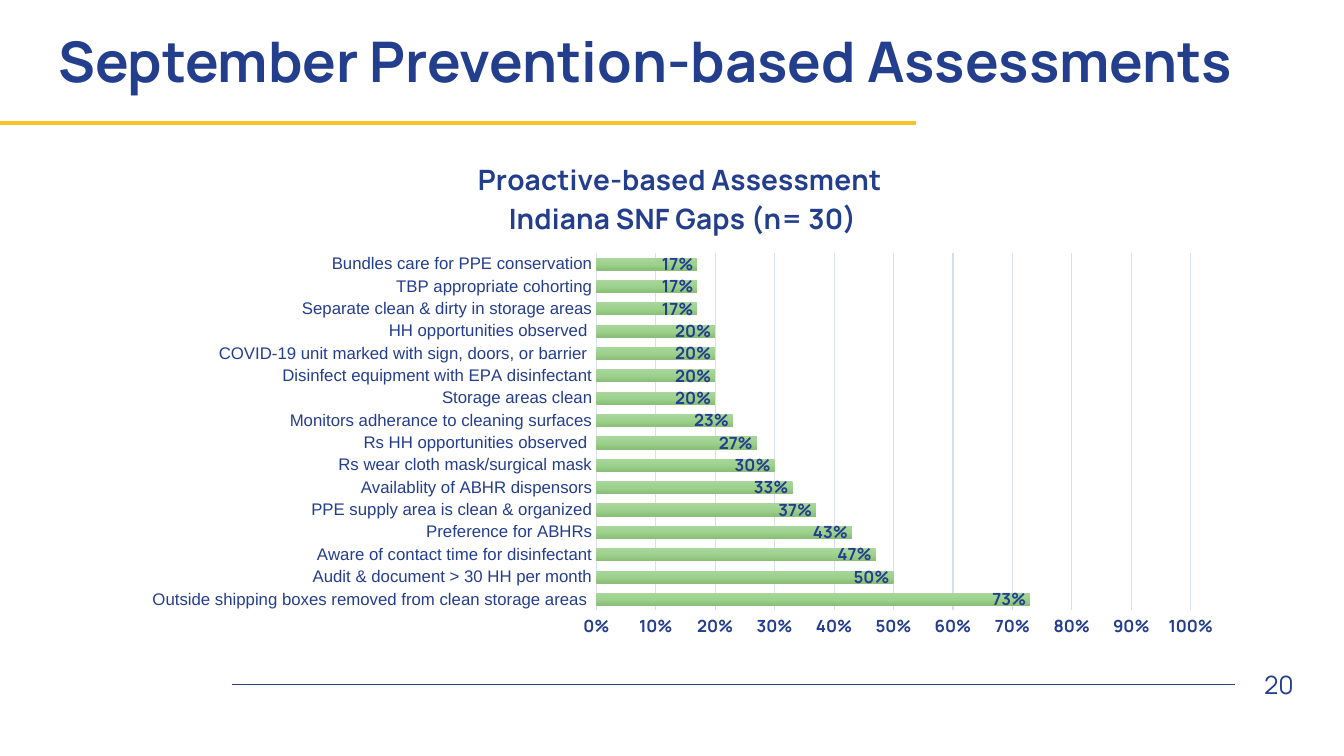
from copy import deepcopy
from dataclasses import dataclass

from lxml import etree
from pptx import Presentation
from pptx.chart.data import CategoryChartData
from pptx.dml.color import RGBColor
from pptx.enum.chart import XL_CHART_TYPE as ChartType, XL_LABEL_POSITION as LabelPosition
from pptx.enum.chart import XL_TICK_MARK as TickMark
from pptx.enum.shapes import MSO_CONNECTOR as Connector
from pptx.enum.text import MSO_ANCHOR as Anchor, PP_ALIGN as Align
from pptx.oxml import parse_xml
from pptx.oxml.ns import nsdecls, qn
from pptx.util import Inches, Pt


@dataclass(frozen=True)
class Theme:
    ink: str = "243E8E"
    accent: str = "F7C327"
    grid: str = "D7DFF5"
    bars: tuple = (
        ((0, "74B35C"), (0.5, "5EAD38"), (1, "529F2D")),
        ((0, "AAD59D"), (0.5, "9DD28D"), (1, "8ABE79")),
    )
    heading_font: str = "Manrope"
    label_font: str = "Arial"
    title_size: int = 40
    chart_title_size: int = 20
    number_size: int = 18
    label_size: int = 12


THEME = Theme()
WIDTH, HEIGHT = 13.33, 7.5

GAPS = [
    ("Outside shipping boxes removed from clean storage areas ", 0.73),
    ("Audit & document > 30 HH per month", 0.5),
    ("Aware of contact time for disinfectant", 0.47),
    ("Preference for ABHRs", 0.43),
    ("PPE supply area is clean & organized", 0.37),
    ("Availablity of ABHR dispensors", 0.33),
    ("Rs wear cloth mask/surgical mask", 0.3),
    ("Rs HH opportunities observed ", 0.27),
    ("Monitors adherance to cleaning surfaces", 0.23),
    ("Storage areas clean", 0.2),
    ("Disinfect equipment with EPA disinfectant", 0.2),
    ("COVID-19 unit marked with sign, doors, or barrier ", 0.2),
    ("HH opportunities observed ", 0.2),
    ("Separate clean & dirty in storage areas", 0.17),
    ("TBP appropriate cohorting", 0.17),
    ("Bundles care for PPE conservation", 0.17),
]


def style_font(font, size, name=THEME.heading_font, bold=False):
    font.size = Pt(size)
    font.name = name
    font.bold = bold
    font.color.rgb = RGBColor.from_string(THEME.ink)


def style_line(line, color, width):
    line.color.rgb = RGBColor.from_string(color)
    line.width = Pt(width)


def add_rule(slide, left, right, y, color, width):
    rule = slide.shapes.add_connector(
        Connector.STRAIGHT, Inches(left), Inches(y), Inches(right), Inches(y))
    style_line(rule.line, color, width)
    etree.SubElement(rule._element.spPr, qn("a:effectLst"))


def add_text(slide, box, text, size, bold=False, align=Align.LEFT):
    frame = slide.shapes.add_textbox(*map(Inches, box)).text_frame
    frame.word_wrap = True
    frame.vertical_anchor = Anchor.MIDDLE
    paragraph = frame.paragraphs[0]
    paragraph.alignment = align
    run = paragraph.add_run()
    run.text = text
    style_font(run.font, size, bold=bold)
    return paragraph


def add_header(slide, box):
    left, top, width, height = box
    title = add_text(slide, box, "September Prevention-based Assessments",
                     THEME.title_size, bold=True)
    title.line_spacing = 0.9
    add_rule(slide, 0, 9.09, top + height + 0.17, THEME.accent, 3)


def add_footer(slide, box):
    left, top, width, height = box
    number_width = 0.68
    number_left = left + width - number_width
    add_rule(slide, left, number_left, top + height / 2, THEME.ink, 1)
    add_text(slide, (number_left, top, number_width, height), "20",
             THEME.number_size, align=Align.RIGHT)


def place(parent, x, y, size=None, inner=False):
    marks = [("xMode", "edge"), ("yMode", "edge"), ("x", x), ("y", y)]
    if inner:
        marks.insert(0, ("layoutTarget", "inner"))
    if size:
        marks += zip("wh", size)
    body = "".join(f'<c:{tag} val="{value}"/>' for tag, value in marks)
    for old in parent.findall(qn("c:layout")):
        parent.remove(old)
    layout = parse_xml(
        f'<c:layout {nsdecls("c")}><c:manualLayout>{body}</c:manualLayout></c:layout>')
    text = parent.find(qn("c:tx"))
    parent.insert(0 if text is None else 1, layout)


def fill_bars(series, colors):
    fill = series.format.fill
    fill.gradient()
    fill.gradient_angle = 270
    stops = series._element.find(".//" + qn("a:gsLst"))
    stops.append(deepcopy(stops[-1]))
    for stop, (position, color) in zip(fill.gradient_stops, colors):
        stop.position = position
        stop.color.rgb = RGBColor.from_string(color)


def add_chart_title(chart):
    frame = chart.chart_title.text_frame
    lines = ("Proactive-based Assessment ", "Indiana SNF Gaps (n= 30)")
    for index, line in enumerate(lines):
        paragraph = frame.add_paragraph() if index else frame.paragraphs[0]
        paragraph.alignment = Align.CENTER
        run = paragraph.add_run()
        run.text = line
        style_font(run.font, THEME.chart_title_size, bold=True)
    place(chart.chart_title._element, 0.312, 0.032)


def add_gap_chart(slide, box):
    data = CategoryChartData(number_format="0%")
    data.categories = [name for name, share in GAPS]
    data.add_series("Series 1", [])
    data.add_series("Series 2", [share for name, share in GAPS])
    chart = slide.shapes.add_chart(
        ChartType.BAR_CLUSTERED, *map(Inches, box), data).chart
    chart.has_legend = False
    style_font(chart.font, THEME.label_size, THEME.label_font)
    add_chart_title(chart)
    place(chart._chartSpace.chart.plotArea, 0.422, 0.224, (0.538, 0.704), inner=True)

    plot = chart.plots[0]
    plot.gap_width = 75
    plot.overlap = 40
    plot.vary_by_categories = False
    for series, colors in zip(plot.series, THEME.bars):
        fill_bars(series, colors)
    labels = plot.series[1].data_labels
    labels.show_value = True
    labels.number_format = "0%"
    labels.number_format_is_linked = False
    labels.position = LabelPosition.INSIDE_END
    style_font(labels.font, THEME.label_size, bold=True)

    for axis in (chart.category_axis, chart.value_axis):
        axis.major_tick_mark = axis.minor_tick_mark = TickMark.NONE
    names, shares = chart.category_axis, chart.value_axis
    style_font(names.tick_labels.font, THEME.label_size, THEME.label_font)
    style_line(names.format.line, THEME.grid, 1)
    style_font(shares.tick_labels.font, THEME.label_size, bold=True)
    shares.tick_labels.number_format = "0%"
    shares.tick_labels.number_format_is_linked = False
    shares.minimum_scale, shares.maximum_scale, shares.major_unit = 0, 1, 0.1
    shares.format.line.fill.background()
    style_line(shares.major_gridlines.format.line, THEME.grid, 0.75)


def main():
    presentation = Presentation()
    presentation.slide_width = Inches(WIDTH)
    presentation.slide_height = Inches(HEIGHT)
    slide = presentation.slides.add_slide(presentation.slide_layouts[6])
    add_header(slide, (0.48, 0.22, 12.55, 0.83))
    add_gap_chart(slide, (1.29, 1.38, 10.96, 5.04))
    add_footer(slide, (2.3, 6.59, 10.63, 0.4))
    presentation.save("out.pptx")


if __name__ == "__main__":
    main()
